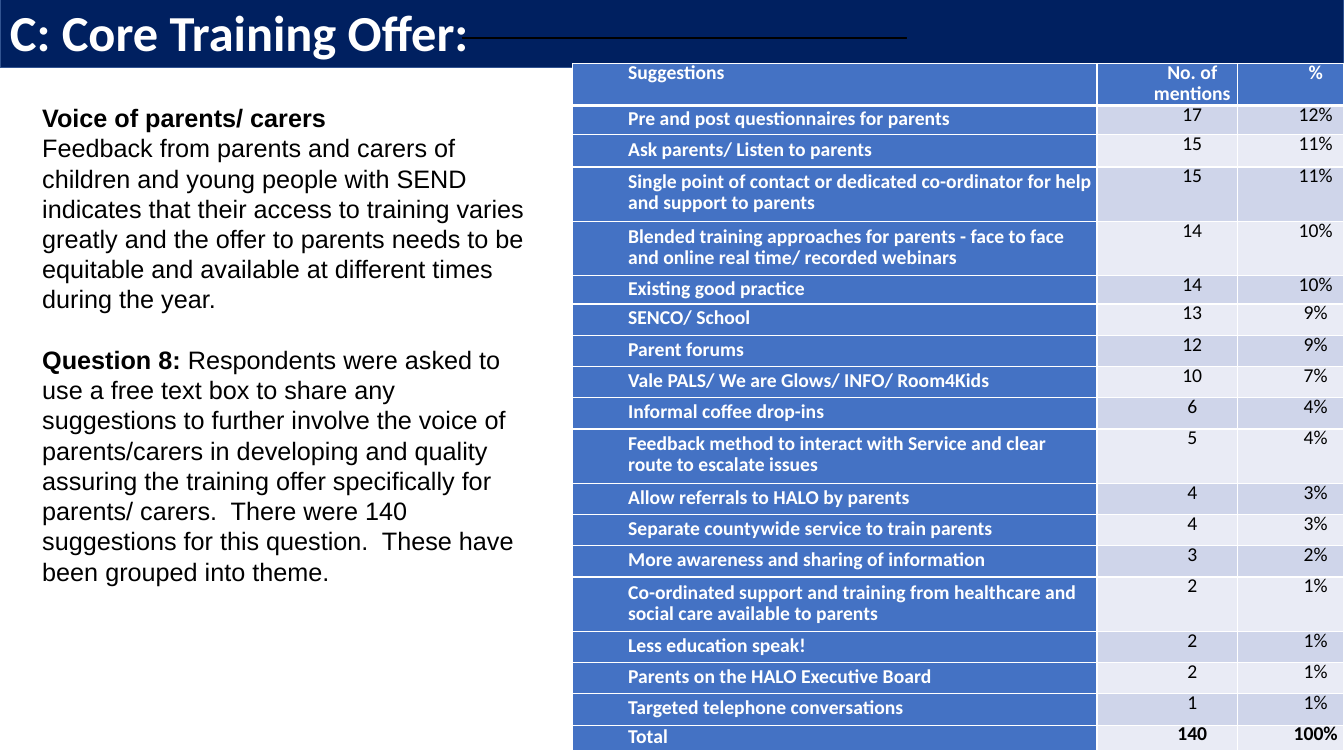
"""Build the core training offer slide with its table of parent suggestions."""
from typing import Any, NamedTuple

from lxml import etree
from pptx import Presentation
from pptx.dml.color import RGBColor
from pptx.enum.shapes import MSO_SHAPE
from pptx.enum.text import MSO_ANCHOR, PP_ALIGN
from pptx.oxml.ns import qn
from pptx.util import Emu, Pt

PX = 9144
RECT = MSO_SHAPE.RECTANGLE
TOP, MIDDLE = MSO_ANCHOR.TOP, MSO_ANCHOR.MIDDLE
LEFT, CENTER = PP_ALIGN.LEFT, PP_ALIGN.CENTER
NAVY = RGBColor(0x00, 0x20, 0x60)
EDGE = RGBColor(0x32, 0x54, 0x91)
BLUE = RGBColor(0x44, 0x72, 0xC4)
PALE = RGBColor(0xCF, 0xD5, 0xEA)
LIGHT = RGBColor(0xE9, 0xEB, 0xF5)
WHITE = RGBColor(0xFF, 0xFF, 0xFF)
BLACK = RGBColor(0x00, 0x00, 0x00)


class Box(NamedTuple):
    left: int
    top: int
    width: int
    height: int


class Bar(NamedTuple):
    box: Box
    fill: RGBColor
    line: RGBColor
    weight: float


class Run(NamedTuple):
    text: str
    bold: bool


class Para(NamedTuple):
    runs: list[Run]
    before: float = 0


class Row(NamedTuple):
    label: str
    count: str
    share: str
    height: int = 31


TITLE = Bar(Box(0, -4, 1333, 71), NAVY, EDGE, 1)
RULE = Bar(Box(459, 37, 440, 1), BLACK, BLACK, 0.75)
VOICE = Box(32, 94, 505, 495)
GRID = Box(568, 63, 765, 685)
WIDTHS = [520, 139, 106]

ROWS = [
    Row("Suggestions", "No. of mentions", "%", 32),
    Row("Pre and post questionnaires for parents", "17", "12%", 29),
    Row("Ask parents/ Listen to parents", "15", "11%", 32),
    Row("Single point of contact or dedicated co-ordinator for help "
        "and support to parents", "15", "11%", 54),
    Row("Blended training approaches for parents - face to face "
        "and online real time/ recorded webinars", "14", "10%", 54),
    Row("Existing good practice", "14", "10%", 28),
    Row("SENCO/ School", "13", "9%"),
    Row("Parent forums", "12", "9%"),
    Row("Vale PALS/ We are Glows/ INFO/ Room4Kids", "10", "7%"),
    Row("Informal coffee drop-ins", "6", "4%"),
    Row("Feedback method to interact with Service and clear "
        "route to escalate issues", "5", "4%", 54),
    Row("Allow referrals to HALO by parents", "4", "3%"),
    Row("Separate countywide service to train parents", "4", "3%"),
    Row("More awareness and sharing of information", "3", "2%"),
    Row("Co-ordinated support and training from healthcare and "
        "social care available to parents", "2", "1%", 54),
    Row("Less education speak!", "2", "1%"),
    Row("Parents on the HALO Executive Board", "2", "1%"),
    Row("Targeted telephone conversations", "1", "1%"),
    Row("Total", "140", "100%", 25),
]

PARAS = [
    Para([Run("Voice of parents/ carers", True)]),
    Para([Run("Feedback from parents and carers of children and young people "
              "with SEND indicates that their access to training varies "
              "greatly and the offer to parents needs to be equitable and "
              "available at different times during the year.", False)]),
    Para([Run("Question 8:", True),
          Run(" Respondents were asked to use a free text box to share any "
              "suggestions to further involve the voice of parents/carers in "
              "developing and quality assuring the training offer "
              "specifically for parents/ carers.  There were 140 suggestions "
              "for this question.  These have been grouped into theme.",
              False)], 21.6),
]


def apply(item: Any, values: dict[str, Any]) -> None:
    """Set each named format value on an item."""
    for name, value in values.items():
        setattr(item, name, value)


def scale(box: Box) -> list[Emu]:
    """Turn the sides of a box into EMU."""
    return [Emu(side * PX) for side in box]


def write(para: Any, run: Run, face: str, size: float,
          color: RGBColor) -> None:
    """Add one styled run to a paragraph."""
    part = para.add_run()
    part.text = run.text
    apply(part.font, {"name": face, "size": Pt(size), "bold": run.bold})
    part.font.color.rgb = color


def draw_bar(slide: Any, bar: Bar) -> Any:
    """Draw a filled rectangle."""
    shape = slide.shapes.add_shape(RECT, *scale(bar.box))
    shape.shadow.inherit = False
    shape.fill.solid()
    shape.fill.fore_color.rgb = bar.fill
    shape.line.color.rgb = bar.line
    shape.line.width = Pt(bar.weight)
    return shape


def draw_title(slide: Any) -> None:
    """Draw the title band."""
    frame = draw_bar(slide, TITLE).text_frame
    apply(frame, {"word_wrap": True, "vertical_anchor": MIDDLE})
    para = frame.paragraphs[0]
    para.alignment = LEFT
    write(para, Run("C: Core Training Offer:", True), "Calibri", 36, WHITE)


def draw_voice(slide: Any) -> None:
    """Draw the text on the voice of parents."""
    frame = slide.shapes.add_textbox(*scale(VOICE)).text_frame
    apply(frame, {"word_wrap": True, "vertical_anchor": MIDDLE})
    for index, item in enumerate(PARAS):
        para = frame.add_paragraph() if index else frame.paragraphs[0]
        para.space_before = Pt(item.before)
        for run in item.runs:
            write(para, run, "Arial", 18, BLACK)


def edge_cell(cell: Any, widths: dict[str, int]) -> None:
    """Add white borders to a cell, each with its width in points."""
    props = cell._tc.get_or_add_tcPr()
    for index, (side, width) in enumerate(widths.items()):
        line = etree.Element(qn(f"a:{side}"), w=str(Pt(width)))
        fill = etree.SubElement(line, qn("a:solidFill"))
        etree.SubElement(fill, qn("a:srgbClr"), val=str(WHITE))
        props.insert(index, line)


def fill_cell(cell: Any, text: str, row: int, col: int) -> None:
    """Write and style one table cell."""
    head = row == 0
    label = col == 0
    solid = head or label
    apply(cell, {"margin_left": Emu(5 * PX), "margin_right": Emu(5 * PX),
                 "margin_top": 0, "margin_bottom": 0,
                 "vertical_anchor": MIDDLE if label and not head else TOP})
    cell.fill.solid()
    cell.fill.fore_color.rgb = BLUE if solid else PALE if row % 2 else LIGHT
    edge_cell(cell, {"lnL": 1, "lnR": 1, "lnT": 3 if row == 1 else 1,
                     "lnB": 3 if head else 1})
    para = cell.text_frame.paragraphs[0]
    apply(para, {"alignment": LEFT if label else CENTER,
                 "line_spacing": Pt(15),
                 "space_after": Pt(10 if col == 2 else 0)})
    props = para._p.get_or_add_pPr()
    props.set("marL", str(50 * PX))
    props.set("indent", "0")
    bold = solid or row == len(ROWS) - 1
    write(para, Run(text, bold), "Calibri", 14, WHITE if solid else BLACK)


def draw_grid(slide: Any) -> None:
    """Draw the table of suggestions."""
    table = slide.shapes.add_table(len(ROWS), len(WIDTHS), *scale(GRID)).table
    apply(table, {"first_row": True, "first_col": True, "horz_banding": False})
    for col, width in enumerate(WIDTHS):
        table.columns[col].width = Emu(width * PX)
    for index, row in enumerate(ROWS):
        table.rows[index].height = Emu(row.height * PX)
        for col, text in enumerate([row.label, row.count, row.share]):
            fill_cell(table.cell(index, col), text, index, col)


def main() -> None:
    """Build and save the slide."""
    deck = Presentation()
    apply(deck, {"slide_width": Emu(1333 * PX), "slide_height": Emu(750 * PX)})
    slide = deck.slides.add_slide(deck.slide_layouts[6])
    draw_title(slide)
    draw_grid(slide)
    draw_voice(slide)
    draw_bar(slide, RULE)
    deck.save("out.pptx")


if __name__ == "__main__":
    main()
